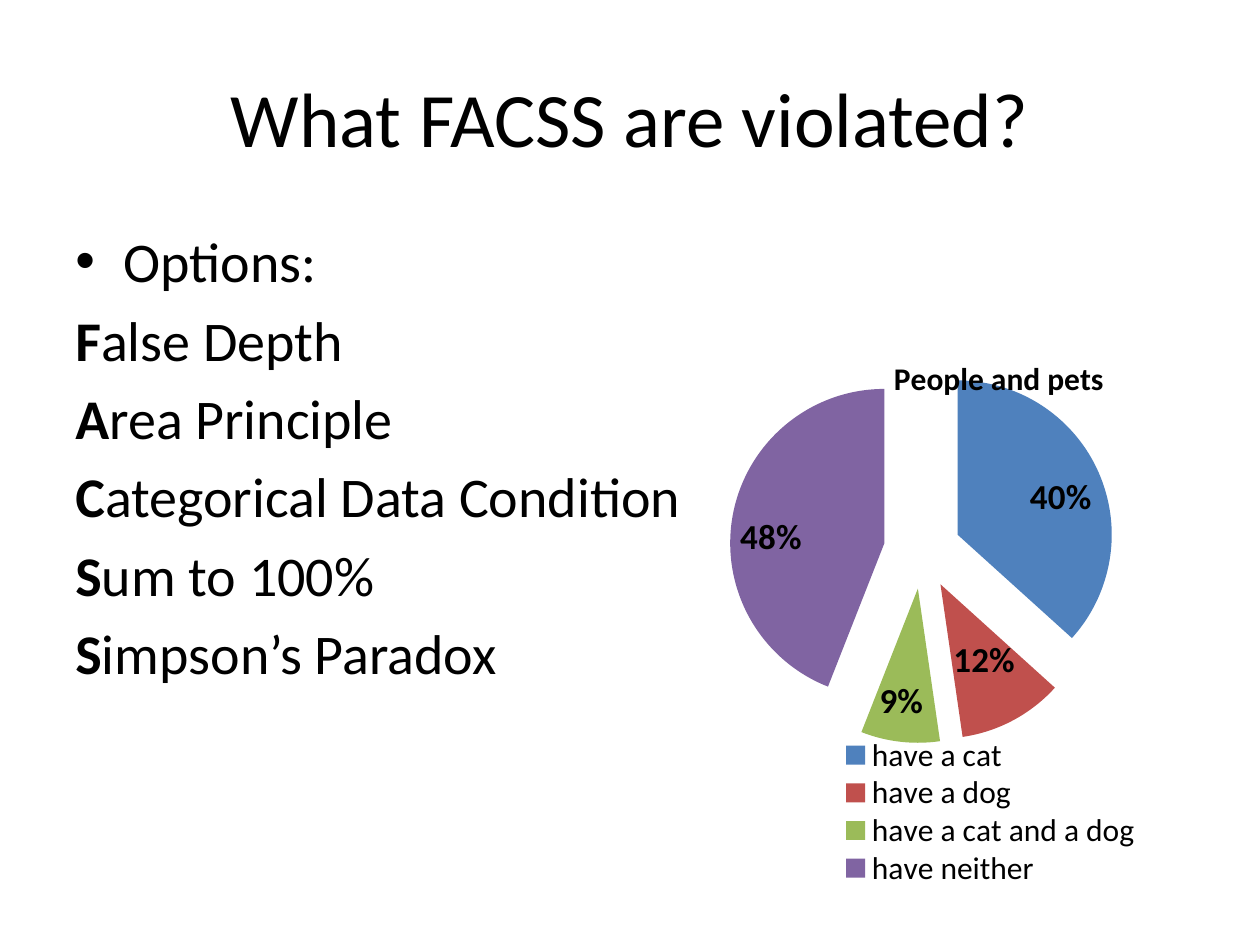
from lxml.etree import SubElement
from pptx import Presentation
from pptx.chart.data import CategoryChartData
from pptx.dml.color import RGBColor
from pptx.enum.chart import XL_CHART_TYPE, XL_LABEL_POSITION, XL_LEGEND_POSITION
from pptx.enum.text import MSO_ANCHOR, PP_ALIGN
from pptx.oxml.ns import qn
from pptx.util import Inches, Pt

FONT = "Calibri"
BLACK = RGBColor(0x00, 0x00, 0x00)
BLUE = RGBColor(0x4F, 0x81, 0xBD)
RED = RGBColor(0xC0, 0x50, 0x4D)
GREEN = RGBColor(0x9B, 0xBB, 0x59)
PURPLE = RGBColor(0x80, 0x64, 0xA2)

OPTIONS = ["False Depth", "Area Principle", "Categorical Data Condition",
           "Sum to 100%", "Simpson’s Paradox"]
PETS = [("have a cat", 0.40, BLUE), ("have a dog", 0.12, RED),
        ("have a cat and a dog", 0.09, GREEN), ("have neither", 0.48, PURPLE)]
LABEL_SHIFTS = {1: (0.01, 0.01), 2: (-0.01, 0.05)}


def style_font(font, size, bold=False):
    font.name = FONT
    font.size = Pt(size)
    font.bold = bold
    font.color.rgb = BLACK


def add_text_box(slide, left, top, width, height, anchor):
    sp = slide.shapes.add_textbox(Inches(left), Inches(top), Inches(width), Inches(height))
    tf = sp.text_frame
    tf.word_wrap = True
    tf.vertical_anchor = anchor
    return tf


def add_title(slide, text):
    tf = add_text_box(slide, 0.5, 0.3, 9, 1.25, MSO_ANCHOR.MIDDLE)
    tf.text = text
    p = tf.paragraphs[0]
    p.alignment = PP_ALIGN.CENTER
    style_font(p.runs[0].font, 44)


def hang_paragraph(p):
    p.space_before = Pt(6.4)
    pPr = p._p.get_or_add_pPr()
    pPr.set("marL", str(Inches(0.38)))
    pPr.set("indent", str(Inches(-0.38)))
    return pPr


def add_run(p, text, bold=False):
    r = p.add_run()
    r.text = text
    style_font(r.font, 32, bold)


def add_options(slide):
    tf = add_text_box(slide, 0.5, 1.75, 5.08, 4.95, MSO_ANCHOR.TOP)
    p = tf.paragraphs[0]
    pPr = hang_paragraph(p)
    SubElement(pPr, qn("a:buFont"), typeface="Arial")
    SubElement(pPr, qn("a:buChar"), char="•")
    add_run(p, "Options:")
    for option in OPTIONS:
        p = tf.add_paragraph()
        hang_paragraph(p)
        add_run(p, option[0], bold=True)
        add_run(p, option[1:])


def set_layout(parent, index, **values):
    for old in parent.findall(qn("c:layout")):
        parent.remove(old)
    layout = SubElement(parent, qn("c:layout"))
    parent.insert(index, layout)
    manual = SubElement(layout, qn("c:manualLayout"))
    for tag, value in values.items():
        SubElement(manual, qn(f"c:{tag}"), val=str(value))


def style_points(series):
    for i, (_, _, color) in enumerate(PETS):
        fill = series.points[i].format.fill
        fill.solid()
        fill.fore_color.rgb = color
    labels = series.data_labels
    labels.show_value = True
    labels.show_percentage = False
    labels.number_format = "0%"
    labels.number_format_is_linked = False
    labels.position = XL_LABEL_POSITION.INSIDE_END
    style_font(labels.font, 20, True)
    for i, (x, y) in LABEL_SHIFTS.items():
        label = series.points[i].data_label
        style_font(label.font, 20, True)
        label.position = XL_LABEL_POSITION.CENTER
        dLbl = series._element.find(f"{qn('c:dLbls')}/{qn('c:dLbl')}[{i}]")
        set_layout(dLbl, 1, x=x, y=y)


def explode(series, percent):
    explosion = SubElement(series._element, qn("c:explosion"), val=str(percent))
    series._element.find(qn("c:dPt")).addprevious(explosion)


def add_pets_chart(slide):
    data = CategoryChartData(number_format="0%")
    data.categories = [name for name, _, _ in PETS]
    data.add_series("Series 1", [share for _, share, _ in PETS])
    chart = slide.shapes.add_chart(XL_CHART_TYPE.PIE, Inches(5.67), Inches(1.42),
                                   Inches(6), Inches(5.67), data).chart
    style_font(chart.font, 10)
    chart.plots[0].vary_by_categories = True
    series = chart.plots[0].series[0]
    style_points(series)
    explode(series, 25)
    set_layout(chart._chartSpace.chart.plotArea, 0, layoutTarget="inner",
               xMode="edge", yMode="edge", x=0.02, y=0.25, w=0.51, h=0.54)

    title = chart.chart_title
    title.text_frame.text = "People and pets"
    style_font(title.text_frame.paragraphs[0].runs[0].font, 18, True)
    set_layout(title._element, 1, xMode="edge", yMode="edge", x=0.23, y=0.24)

    chart.has_legend = True
    legend = chart.legend
    legend.position = XL_LEGEND_POSITION.RIGHT
    legend.include_in_layout = False
    style_font(legend.font, 18)
    set_layout(legend._element, 1, xMode="edge", yMode="edge",
               x=0.16, y=0.78, w=0.41, h=0.21)


def main():
    prs = Presentation()
    prs.slide_width = Inches(10)
    prs.slide_height = Inches(7.5)
    slide = prs.slides.add_slide(prs.slide_layouts[6])
    add_pets_chart(slide)
    add_title(slide, "What FACSS are violated?")
    add_options(slide)
    prs.save("out.pptx")


if __name__ == "__main__":
    main()
